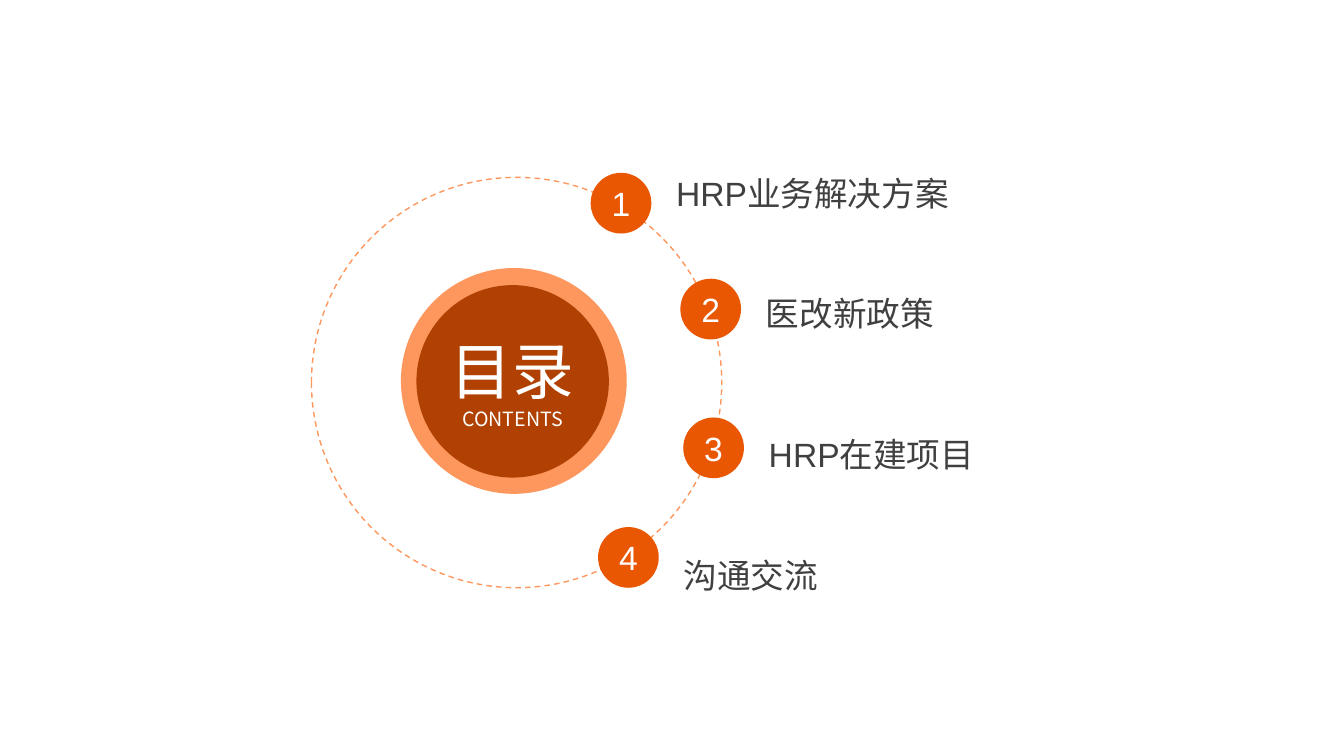
from math import cos, radians, sin

from lxml import etree
from pptx import Presentation
from pptx.dml.color import RGBColor
from pptx.enum.dml import MSO_LINE
from pptx.enum.shapes import MSO_SHAPE
from pptx.enum.text import MSO_ANCHOR, PP_ALIGN
from pptx.oxml.ns import qn
from pptx.util import Cm, Pt

OVAL = MSO_SHAPE.OVAL
DASH = MSO_LINE.DASH
MIDDLE = MSO_ANCHOR.MIDDLE
LEFT, CENTER = PP_ALIGN.LEFT, PP_ALIGN.CENTER

TITLE, SUBTITLE = "目录", "CONTENTS"
# label, label width, label shift below its badge
ITEMS = [
    ("HRP业务解决方案", 9.93, -0.36),
    ("医改新政策", 8.08, 0),
    ("HRP在建项目", 8.38, 0.05),
    ("沟通交流", 10.24, 0.33),
]

THEME = {
    "light": "FD975D", "dark": "B04102", "badge": "EA5703",
    "white": "FFFFFF", "text": "404040",
    "latin": "Arial", "cjk": "Noto Sans CJK SC",
    "title": 44, "subtitle": 14, "item": 24,
}

HALO = (12.95, 9.6, 5.69)
RING = (13.02, 9.64, 10.34)
CORE = (12.92, 9.61, 4.85)
BADGE_SIZE, BADGE_ORBIT = 1.53, 5.23
FIRST_ANGLE, ANGLE_STEP = -59.8, 39.07
LABEL_GAP, LABEL_HEIGHT = 1.29, 2.13


def color(key):
    return RGBColor.from_string(THEME[key])


def add_circle(slide, x, y, size, fill=None, line=None):
    s = slide.shapes.add_shape(OVAL, Cm(x - size / 2), Cm(y - size / 2), Cm(size), Cm(size))
    s.shadow.inherit = False
    if fill:
        s.fill.solid()
        s.fill.fore_color.rgb = color(fill)
    else:
        s.fill.background()
    if line:
        s.line.color.rgb = color(line)
        s.line.width = Pt(1)
        s.line.dash_style = DASH
    else:
        s.line.fill.background()
    return s


def write(s, lines, ink, font, align=CENTER, inset=0, spacing=None):
    tf = s.text_frame
    tf.word_wrap = True
    tf.vertical_anchor = MIDDLE
    tf.margin_left = Cm(inset)
    tf.margin_top = tf.margin_right = tf.margin_bottom = 0
    tf.text = "\n".join(text for text, _ in lines)
    for p, (_, size) in zip(tf.paragraphs, lines):
        p.alignment = align
        if spacing:
            p.line_spacing = spacing
        for r in p.runs:
            r.font.size = Pt(THEME[size])
            r.font.color.rgb = color(ink)
            r.font.name = THEME[font]
            ea = etree.SubElement(r.font._element, qn("a:ea"))
            ea.set("typeface", THEME["cjk"])


def add_item(slide, index, label, width, shift):
    angle = radians(FIRST_ANGLE + index * ANGLE_STEP)
    x = RING[0] + BADGE_ORBIT * cos(angle)
    y = RING[1] + BADGE_ORBIT * sin(angle)
    badge = add_circle(slide, x, y, BADGE_SIZE, fill="badge")
    write(badge, [(str(index + 1), "item")], "white", "latin")
    top = y + shift - LABEL_HEIGHT / 2
    box = slide.shapes.add_textbox(Cm(x + LABEL_GAP), Cm(top), Cm(width), Cm(LABEL_HEIGHT))
    write(box, [(label, "item")], "text", "latin", LEFT, 0.1, 1.2)


def main():
    prs = Presentation()
    prs.slide_width, prs.slide_height = Cm(33.87), Cm(19.05)
    slide = prs.slides.add_slide(prs.slide_layouts[6])
    add_circle(slide, *HALO, fill="light")
    add_circle(slide, *RING, line="light")
    core = add_circle(slide, *CORE, fill="dark")
    write(core, [(TITLE, "title"), (SUBTITLE, "subtitle")], "white", "cjk")
    for index, item in enumerate(ITEMS):
        add_item(slide, index, *item)
    prs.save("out.pptx")


if __name__ == "__main__":
    main()
